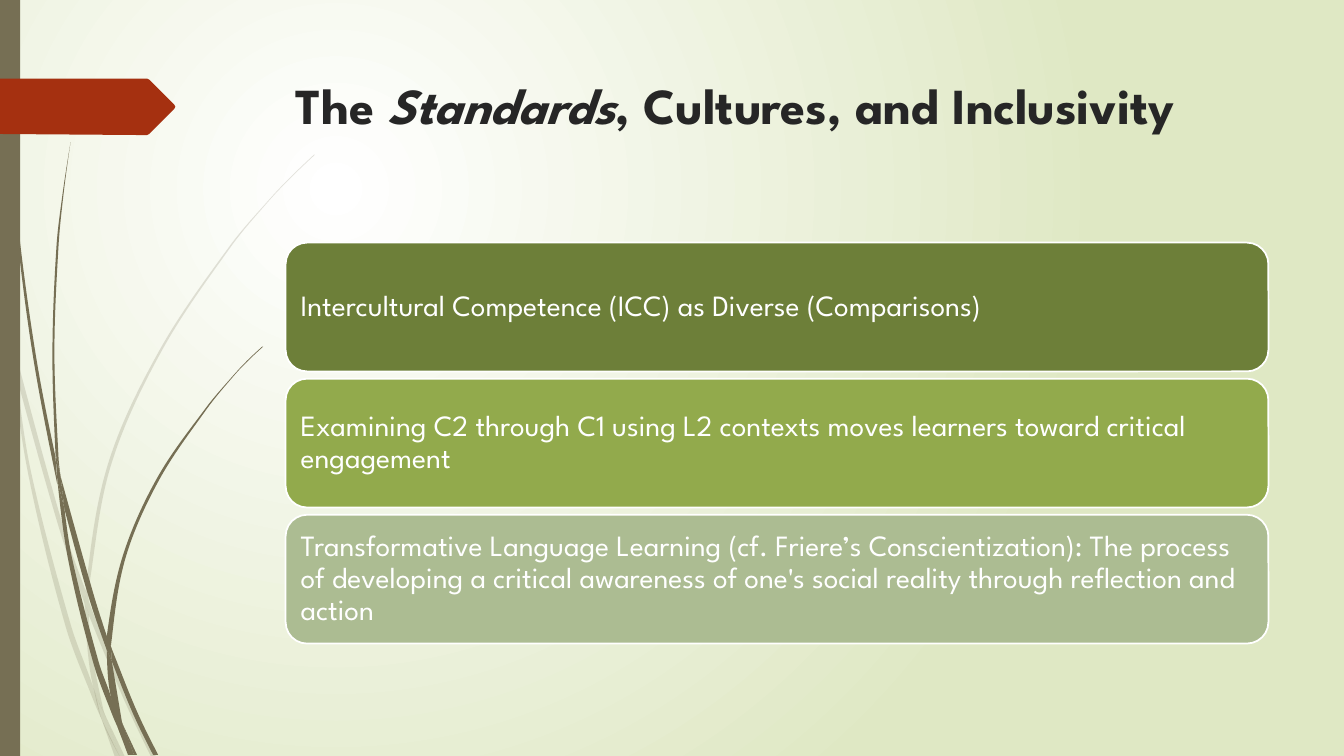
from math import dist

from lxml import etree
from pptx import Presentation
from pptx.dml.color import RGBColor
from pptx.enum.shapes import MSO_SHAPE
from pptx.enum.text import MSO_ANCHOR, PP_ALIGN
from pptx.oxml.ns import qn
from pptx.util import Pt

RECTANGLE = MSO_SHAPE.RECTANGLE
ROUNDED = MSO_SHAPE.ROUNDED_RECTANGLE
MIDDLE = MSO_ANCHOR.MIDDLE
LEFT = PP_ALIGN.LEFT

COLORS = {
    "white": "FFFFFF",
    "mist": "DFE8C4",
    "bark": "766F54",
    "rust": "A53010",
    "ink": "262626",
    "olive": "6D7F39",
    "leaf": "92AA4C",
    "sage": "ACBC92",
}
FONT = "League Spartan"
GRID = 0.72

PALE_GRASS = [
    [[(11, 350), (9, 322), (0, 282)], [(0, 299), (10, 344)]],
    [[(17, 376), (58, 522), (84, 599)], [(85, 586), (62, 520), (14, 345)]],
    [[(88, 610), (123, 694), (150, 751)], [(155, 751), (127, 692), (92, 607), (88, 596)]],
    [[(105, 711), (119, 751)], [(124, 751)]],
    [[(11, 350), (28, 470), (65, 621), (92, 693), (101, 714)],
     [(99, 707), (93, 683), (70, 619), (31, 469), (17, 376)]],
    [[(84, 599), (87, 646), (93, 683), (105, 711)], [(103, 706), (91, 646), (88, 608)]],
    [[(85, 586), (107, 461), (158, 348), (228, 244), (268, 197), (289, 175), (312, 153)],
     [(312, 154), (290, 175), (268, 198), (229, 245), (160, 349), (110, 462), (88, 584), (88, 596)]],
    [[(101, 714), (114, 751)], [(119, 751)]],
    [[(84, 599), (88, 608)], [(88, 596), (85, 586)]],
    [[(93, 683), (101, 714), (119, 751)], [(105, 711), (96, 692)]],
]
DARK_GRASS = [
    [[(3, 0), (4, 48), (7, 110), (17, 233), (33, 355), (57, 481)],
     [(55, 453), (36, 355), (19, 232), (8, 109), (5, 48), (4, 0)]],
    [[(64, 505), (88, 592), (106, 645)], [(106, 631), (93, 590), (60, 472)]],
    [[(111, 656), (132, 708), (152, 749)], [(157, 749), (136, 706), (113, 649), (110, 641)]],
    [[(57, 477), (68, 557), (93, 659), (111, 708), (117, 722)],
     [(116, 717), (110, 691), (98, 657), (72, 556), (64, 505)]],
    [[(60, 472), (58, 453), (54, 349), (58, 245), (63, 193), (70, 141)],
     [(70, 141), (62, 193), (56, 245), (52, 349), (55, 449)]],
    [[(122, 719), (133, 749)], [(136, 749)]],
    [[(57, 477), (64, 505)], [(60, 472), (55, 449)]],
    [[(111, 633), (125, 552), (158, 476), (205, 406), (231, 374), (245, 359), (261, 344)],
     [(260, 344), (245, 358), (231, 373), (204, 405), (156, 474), (122, 551), (106, 631), (110, 641)]],
    [[(117, 722), (127, 749)], [(131, 749)]],
    [[(106, 645), (110, 691), (122, 719)], [(121, 716), (111, 656)]],
    [[(106, 645), (111, 656)], [(110, 641), (106, 631)]],
    [[(110, 691), (117, 722), (130, 749)], [(133, 749), (122, 719), (116, 706)]],
]
PENNANT = [
    [(0, 78)], [(146, 78)], [(148, 79)], [(173, 104), (174, 106), (173, 108)],
    [(148, 133)], [(146, 134)], [(136, 134)], [(0, 133)],
]
BANDS = [
    ("olive", "Intercultural Competence (ICC) as Diverse (Comparisons)"),
    ("leaf", "Examining C2 through C1 using L2 contexts moves learners toward critical engagement"),
    ("sage", "Transformative Language Learning (cf. Friere’s Conscientization): The process of "
             "developing a critical awareness of one's social reality through reflection and action"),
]


def handle(before, point, after, length):
    span = dist(before, after)
    return tuple(p + (a - b) / span * length / 3 for b, p, a in zip(before, point, after))


def bend(edge):
    handles = []
    for index, (start, end) in enumerate(zip(edge, edge[1:])):
        length = dist(start, end)
        first, last = index == 0, index == len(edge) - 2
        leaving = None if first else handle(edge[index - 1], start, end, length)
        arriving = None if last else handle(edge[index + 2], end, start, length)
        leaving = leaving or tuple((p + q) / 2 for p, q in zip(start, arriving or end))
        arriving = arriving or tuple((p + q) / 2 for p, q in zip(end, leaving))
        handles.append((leaving, arriving))
    return handles


class SlideBuilder:
    def __init__(self, presentation):
        self.slide = presentation.slides.add_slide(presentation.slide_layouts[6])
        self.shapes = self.slide.shapes

    def color(self, name):
        return RGBColor.from_string(COLORS[name])

    def background(self, inner, outer):
        fill = self.slide.background.fill
        fill.gradient()
        for stop, name in zip(fill.gradient_stops, (inner, outer)):
            stop.color.rgb = self.color(name)
        gradient = next(self.slide.element.iter(qn("a:gradFill")))
        gradient.remove(gradient.find(qn("a:lin")))
        circle = etree.SubElement(gradient, qn("a:path"), path="circle")
        etree.SubElement(circle, qn("a:fillToRect"), l="50000", t="50000", r="100000", b="100000")

    def paint(self, shape, color, line=None, opacity=100):
        shape.shadow.inherit = False
        shape.fill.solid()
        shape.fill.fore_color.rgb = self.color(color)
        if line:
            shape.line.color.rgb = self.color(line)
            shape.line.width = Pt(1.25)
        else:
            shape.line.fill.background()
        if opacity < 100:
            solid = shape.element.spPr.find(qn("a:solidFill"))
            etree.SubElement(solid[0], qn("a:alpha"), val=str(opacity * 1000))

    def outline(self, shapes, edges, color, opacity=100):
        points = [(Pt(x * GRID), Pt(y * GRID)) for edge in edges for x, y in edge]
        builder = shapes.build_freeform(*points[0])
        builder.add_line_segments(points[1:])
        shape = builder.convert_to_shape()
        self.paint(shape, color, opacity=opacity)
        bends = [pair for edge in edges for pair in [None, *bend(edge)]][1:]
        for segment, pair in zip(list(shape.element.iter(qn("a:lnTo"))), bends):
            if pair:
                segment.tag = qn("a:cubicBezTo")
                for position, (x, y) in enumerate(pair):
                    point = etree.Element(
                        qn("a:pt"),
                        x=str(Pt(x * GRID) - shape.left),
                        y=str(Pt(y * GRID) - shape.top),
                    )
                    segment.insert(position, point)

    def grass(self, blades, opacity=100):
        group = self.shapes.add_group_shape()
        for blade in blades:
            self.outline(group.shapes, blade, "bark", opacity)

    def box(self, kind, left, top, width, height, color, line=None):
        shape = self.shapes.add_shape(kind, Pt(left), Pt(top), Pt(width), Pt(height))
        self.paint(shape, color, line)
        return shape

    def style(self, paragraph, size, color):
        paragraph.alignment = LEFT
        paragraph.font.name = FONT
        paragraph.font.size = Pt(size)
        paragraph.font.color.rgb = self.color(color)

    def title(self, left, top, width, height, runs):
        shape = self.shapes.add_textbox(Pt(left), Pt(top), Pt(width), Pt(height))
        shape.text_frame.word_wrap = True
        paragraph = shape.text_frame.paragraphs[0]
        self.style(paragraph, 36, "ink")
        paragraph.font.bold = True
        for text, italic in runs:
            run = paragraph.add_run()
            run.text = text
            run.font.italic = italic

    def band(self, left, top, width, height, color, text):
        frame = self.box(ROUNDED, left, top, width, height, color, "white").text_frame
        frame.word_wrap = True
        frame.vertical_anchor = MIDDLE
        frame.margin_left = frame.margin_right = Pt(6.3)
        frame.margin_top = frame.margin_bottom = Pt(6.3)
        paragraph = frame.paragraphs[0]
        paragraph.text = text
        self.style(paragraph, 21, "white")
        paragraph.line_spacing = 0.9
        paragraph.space_after = Pt(7.35)


def main():
    presentation = Presentation()
    presentation.slide_width = Pt(960)
    presentation.slide_height = Pt(540)
    builder = SlideBuilder(presentation)
    builder.background("white", "mist")
    builder.grass(PALE_GRASS, opacity=20)
    builder.grass(DARK_GRASS)
    builder.box(RECTANGLE, 0, 0, 14.4, 540, "bark")
    builder.outline(builder.shapes, PENNANT, "rust")
    builder.title(204, 49.7, 702, 100.8, [
        ("The ", False), ("Standards", True), (", Cultures, and Inclusivity", False),
    ])
    for index, (color, text) in enumerate(BANDS):
        builder.band(204, 173.3 + index * 97.2, 702, 92, color, text)
    presentation.save("out.pptx")


if __name__ == "__main__":
    main()
